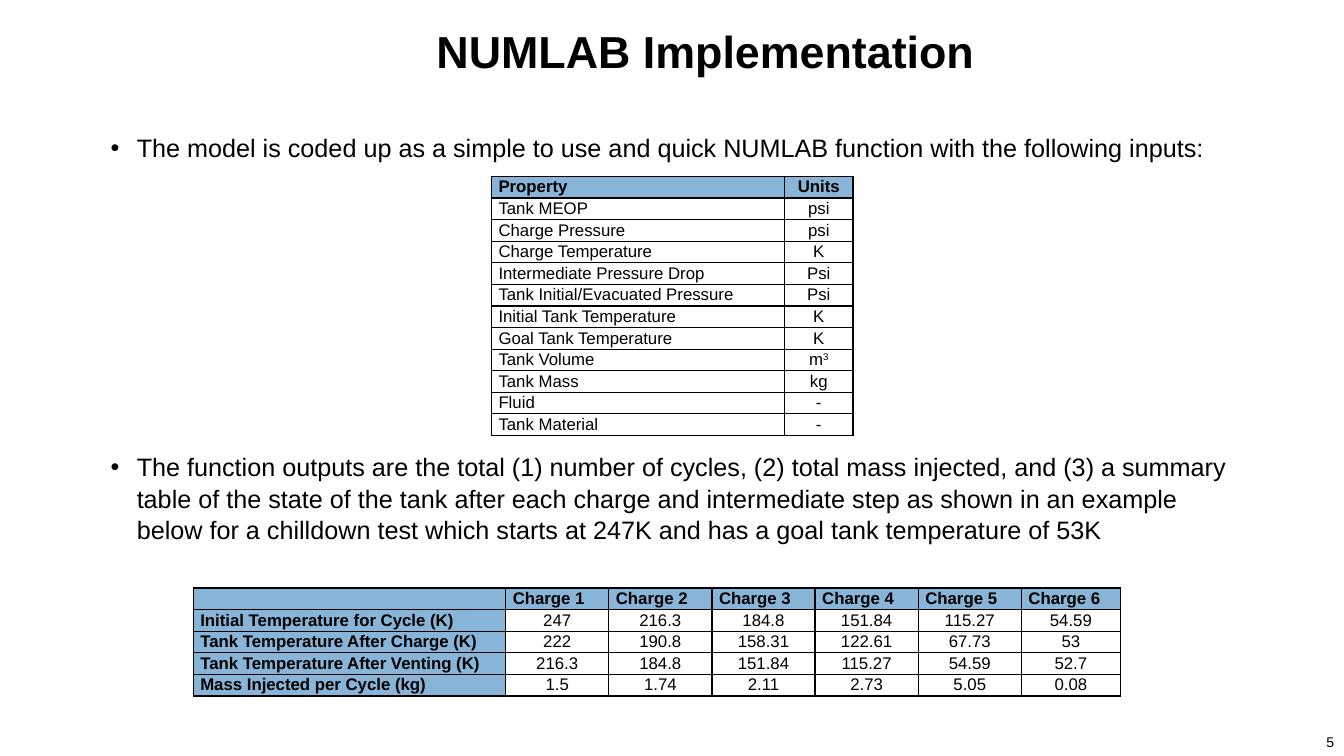
import pptx
import pptx.util
import pptx.dml.color
import pptx.enum.text
import pptx.oxml.ns
import lxml.etree

Pt = pptx.util.Pt
ALIGN = pptx.enum.text.PP_ALIGN
ANCHOR = pptx.enum.text.MSO_ANCHOR
COLORS = {"ink": "000000", "head": "88B4D7", "page": "FFFFFF"}
FONT = "Arial"

# Grid of 160 columns by 90 rows, each unit a twelfth of an inch
UNIT = pptx.util.Inches(1) / 12
COLS, ROWS = 160, 90
LINE = 2.4

INPUTS = [
    ("Property", "Units"),
    ("Tank MEOP", "psi"),
    ("Charge Pressure", "psi"),
    ("Charge Temperature", "K"),
    ("Intermediate Pressure Drop", "Psi"),
    ("Tank Initial/Evacuated Pressure", "Psi"),
    ("Initial Tank Temperature", "K"),
    ("Goal Tank Temperature", "K"),
    ("Tank Volume", "m^3"),
    ("Tank Mass", "kg"),
    ("Fluid", "-"),
    ("Tank Material", "-"),
]
CYCLES = [
    [""] + [f"Charge {n}" for n in range(1, 7)],
    ["Initial Temperature for Cycle (K)", "247", "216.3", "184.8", "151.84", "115.27", "54.59"],
    ["Tank Temperature After Charge (K)", "222", "190.8", "158.31", "122.61", "67.73", "53"],
    ["Tank Temperature After Venting (K)", "216.3", "184.8", "151.84", "115.27", "54.59", "52.7"],
    ["Mass Injected per Cycle (kg)", "1.5", "1.74", "2.11", "2.73", "5.05", "0.08"],
]
POINTS = [
    "The model is coded up as a simple to use and quick NUMLAB function with the following inputs:",
    "The function outputs are the total (1) number of cycles, (2) total mass injected, and (3) "
    "a summary table of the state of the tank after each charge and intermediate step as shown "
    "in an example below for a chilldown test which starts at 247K and has a goal tank "
    "temperature of 53K",
]


def span(units):
    return round(units * UNIT)


def tint(name):
    return pptx.dml.color.RGBColor.from_string(COLORS[name])


def node(owner, tag, **attrs):
    return lxml.etree.SubElement(owner, pptx.oxml.ns.qn(tag), attrs)


def add_run(para, text, size, bold=False):
    run = para.add_run()
    run.text = text
    font = run.font
    font.name, font.size, font.bold = FONT, Pt(size), bold
    font.color.rgb = tint("ink")
    return run


def add_frame(slide, box):
    frame = slide.shapes.add_textbox(*map(span, box)).text_frame
    frame.word_wrap = True
    return frame


# Title and page number
def add_label(slide, box, text, size, align, bold=False, anchor=ANCHOR.TOP):
    frame = add_frame(slide, box)
    frame.vertical_anchor = anchor
    para = frame.paragraphs[0]
    para.alignment = align
    add_run(para, text, size, bold)


# Bulleted text, with a gap left for the first table
def add_points(slide, box, points, gap):
    frame = add_frame(slide, box)
    for i, text in enumerate(points):
        para = frame.add_paragraph() if i else frame.paragraphs[0]
        props = para._p.get_or_add_pPr()
        props.set("marL", str(span(3.1)))
        props.set("indent", str(-span(3.1)))
        node(props, "a:buFont", typeface=FONT)
        node(props, "a:buChar", char="•")
        para.line_spacing = 1.05
        para.space_before = Pt(gap if i else 0)
        add_run(para, text, 18)


def add_edges(cell):
    props = cell._tc.get_or_add_tcPr()
    for i, side in enumerate(("a:lnL", "a:lnR", "a:lnT", "a:lnB")):
        edge = lxml.etree.Element(pptx.oxml.ns.qn(side), w=str(Pt(1)))
        node(node(edge, "a:solidFill"), "a:srgbClr", val=COLORS["ink"])
        props.insert(i, edge)


def fill_cell(cell, text, head, align):
    cell.margin_left = cell.margin_right = span(0.85)
    cell.margin_top = cell.margin_bottom = 0
    cell.fill.solid()
    cell.fill.fore_color.rgb = tint("head" if head else "page")
    add_edges(cell)
    para = cell.text_frame.paragraphs[0]
    para.alignment, para.line_spacing = align, 1.07
    if not text:
        node(para._p, "a:endParaRPr", sz="1200")
        return
    base, _, power = text.partition("^")
    add_run(para, base, 12, head)
    if power:
        add_run(para, power, 12).font._element.set("baseline", "30000")


# Table with shaded header row and, on request, shaded first column
def add_grid(slide, spot, widths, data, side, aligns):
    size = (sum(widths), LINE * len(data))
    table = slide.shapes.add_table(len(data), len(widths), *map(span, spot + size)).table
    table.first_row = table.horz_banding = False
    for column, width in zip(table.columns, widths):
        column.width = span(width)
    for r, line in enumerate(data):
        table.rows[r].height = span(LINE)
        for c, text in enumerate(line):
            head = r == 0 or (side and c == 0)
            align = ALIGN.LEFT if c == 0 else aligns[min(r, 1)]
            fill_cell(table.cell(r, c), text, head, align)


def main():
    deck = pptx.Presentation()
    deck.slide_width, deck.slide_height = span(COLS), span(ROWS)
    slide = deck.slides.add_slide(deck.slide_layouts[6])
    add_label(slide, (20, 3, 128, 6), "NUMLAB Implementation", 32, ALIGN.CENTER, True, ANCHOR.MIDDLE)
    add_label(slide, (152, 86.75, 8, 3.25), "5", 10, ALIGN.RIGHT)
    add_points(slide, (12, 15, 136, 73), POINTS, 205)
    add_grid(slide, (58.5, 21), (34.9, 8.15), INPUTS, False, (ALIGN.CENTER, ALIGN.CENTER))
    add_grid(slide, (23, 70), (37.2,) + (12.28,) * 5 + (11.8,), CYCLES, True,
             (ALIGN.LEFT, ALIGN.CENTER))
    deck.save("out.pptx")


if __name__ == "__main__":
    main()
